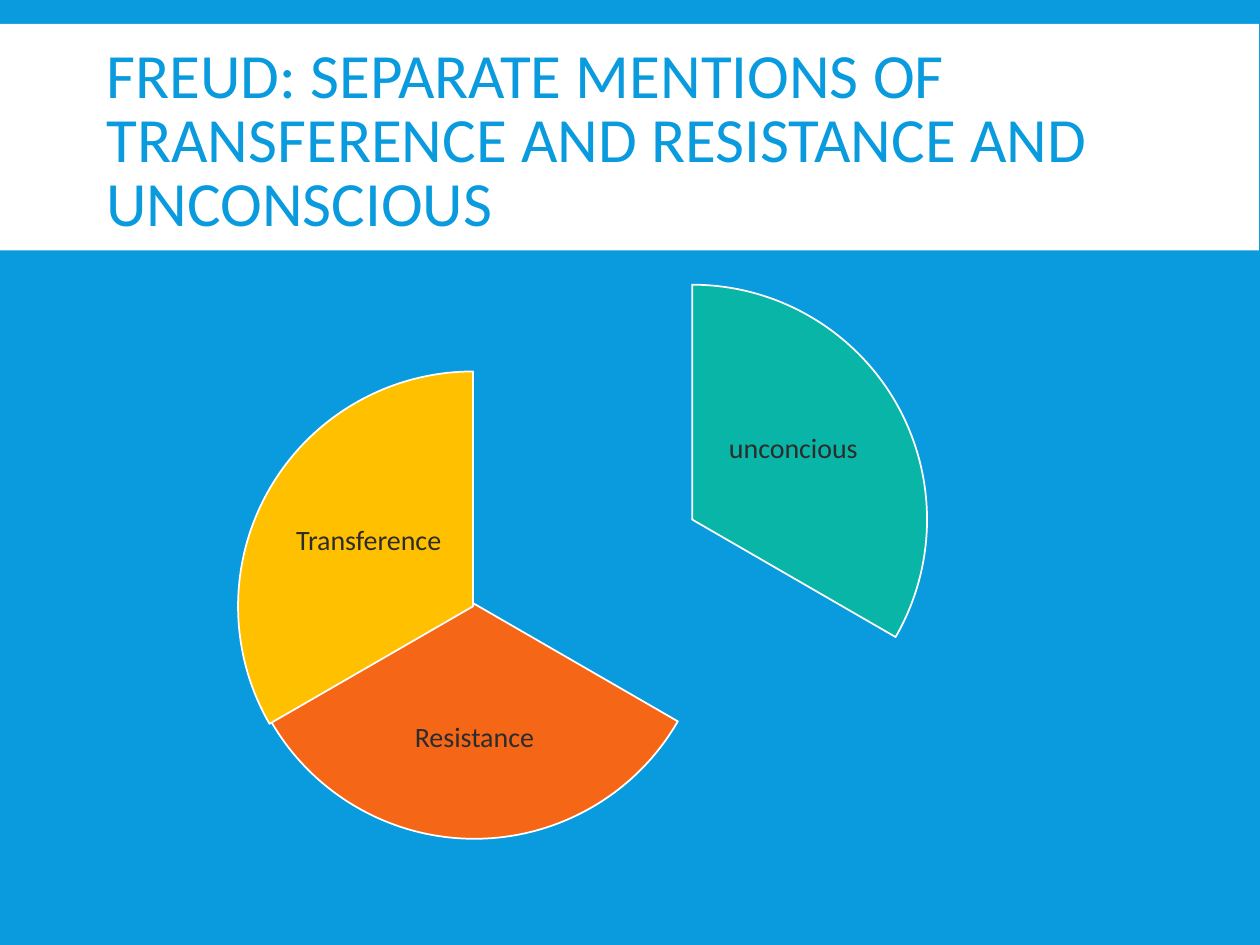
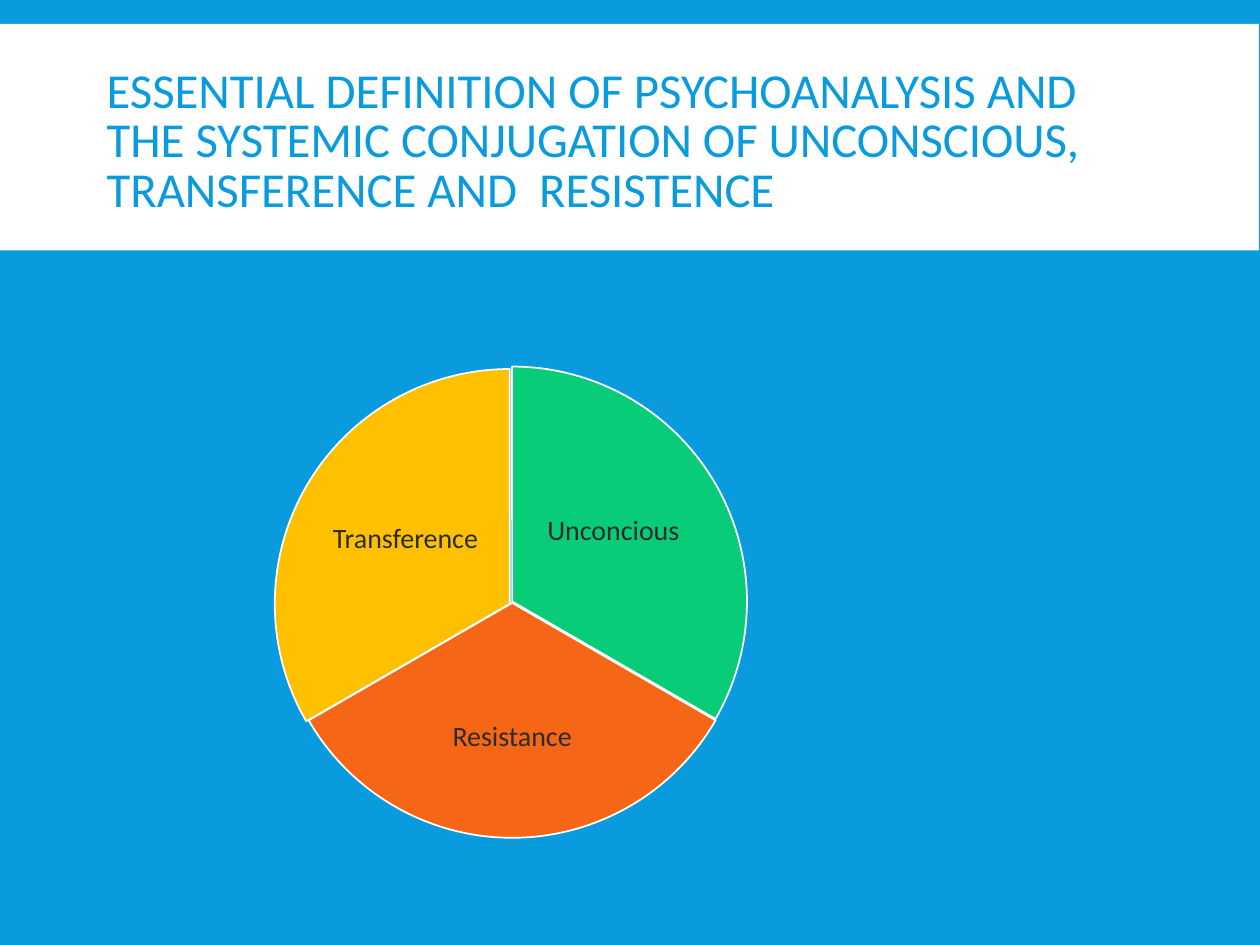
from lxml.etree import SubElement
from pptx import Presentation
from pptx.dml.color import RGBColor
from pptx.enum.shapes import MSO_SHAPE
from pptx.enum.text import MSO_ANCHOR, PP_ALIGN
from pptx.oxml.ns import qn
from pptx.util import Cm, Pt

FONT = "Calibri"
COLORS = {
    "blue": "099BDD",
    "white": "FFFFFF",
    "green": "08CC78",
    "orange": "F56617",
    "yellow": "FFC000",
    "ink": "2C2C2C",
}
BAND = (0, 0.48, 25.38, 4.57)
TITLE = (1.9, 0.79, 21.59, 4.19)
SIZE = 9.47  # diameter of the pie

# Each third: colour, start angle, label box relative to its pie
THIRDS = [
    ("green", 270, (5.16, 1.75, 3.23, 3.15)),
    ("orange", 30, (2.59, 5.98, 4.29, 2.95)),
    ("yellow", 150, (1.02, 1.85, 3.23, 3.15)),
]

# Each slide: title, title size, opacity of the first third, labels with pie corners
SLIDES = [
    ("FREUD: SEPARATE MENTIONS OF TRANSFERENCE AND RESISTANCE AND UNCONSCIOUS",
     36, 54,
     [("unconcious", 9.22, 5.74), ("Resistance", 4.83, 7.44),
      ("Transference", 4.8, 7.49)]),
    ("ESSENTIAL DEFINITION OF PSYCHOANALYSIS AND THE SYSTEMIC CONJUGATION "
     "OF UNCONSCIOUS, TRANSFERENCE AND  RESISTENCE",
     27.9, 100,
     [("Unconcious", 5.59, 7.39), ("Resistance", 5.59, 7.42),
      ("Transference", 5.54, 7.44)]),
]


def paint(fill, name):
    fill.solid()
    fill.fore_color.rgb = RGBColor.from_string(COLORS[name])


def add_form(slide, kind, box, color):
    form = slide.shapes.add_shape(kind, *map(Cm, box))
    form.shadow.inherit = False
    paint(form.fill, color)
    form.line.fill.background()
    return form


def add_text(slide, box, text, size, color, space, align=PP_ALIGN.LEFT, inset=None):
    frame = slide.shapes.add_textbox(*map(Cm, box)).text_frame
    frame.word_wrap = True
    frame.vertical_anchor = MSO_ANCHOR.MIDDLE
    if inset is not None:
        frame.margin_left = frame.margin_right = Cm(inset)
        frame.margin_top = frame.margin_bottom = Cm(inset)
    frame.text = text
    para = frame.paragraphs[0]
    para.alignment = align
    para.line_spacing = space
    font = para.runs[0].font
    font.name = FONT
    font.size = Pt(size)
    font.color.rgb = RGBColor.from_string(COLORS[color])


def add_head(slide, text, size):
    """Paint the background, then the white band with its title."""
    paint(slide.background.fill, "blue")
    add_form(slide, MSO_SHAPE.RECTANGLE, BAND, "white")
    add_text(slide, TITLE, text, size, "blue", 0.85)


def fade(form, share):
    """Set the opacity of a solid fill, in percent."""
    color = form.fill._xPr.find(qn("a:solidFill"))[0]
    SubElement(color, qn("a:alpha")).set("val", str(share * 1000))


def add_third(slide, left, top, third, label, share):
    color, start, (dx, dy, width, height) = third
    form = add_form(slide, MSO_SHAPE.PIE, (left, top, SIZE, SIZE), color)
    # Angles are stored in 60000ths of a degree, adjustments in 100000ths
    form.adjustments[0] = start * 0.6
    form.adjustments[1] = (start + 120) % 360 * 0.6
    paint(form.line.fill, "white")
    form.line.width = Pt(1)
    if share < 100:
        fade(form, share)
    add_text(slide, (left + dx, top + dy, width, height), label,
             16, "ink", 0.9, PP_ALIGN.CENTER, 0.05)


def main():
    deck = Presentation()
    deck.slide_width, deck.slide_height = Cm(25.4), Cm(19.05)
    for title, size, share, parts in SLIDES:
        slide = deck.slides.add_slide(deck.slide_layouts[6])
        add_head(slide, title, size)
        for third, (label, left, top) in zip(THIRDS, parts):
            solid = share if third is THIRDS[0] else 100
            add_third(slide, left, top, third, label, solid)
    deck.save("out.pptx")


if __name__ == "__main__":
    main()
